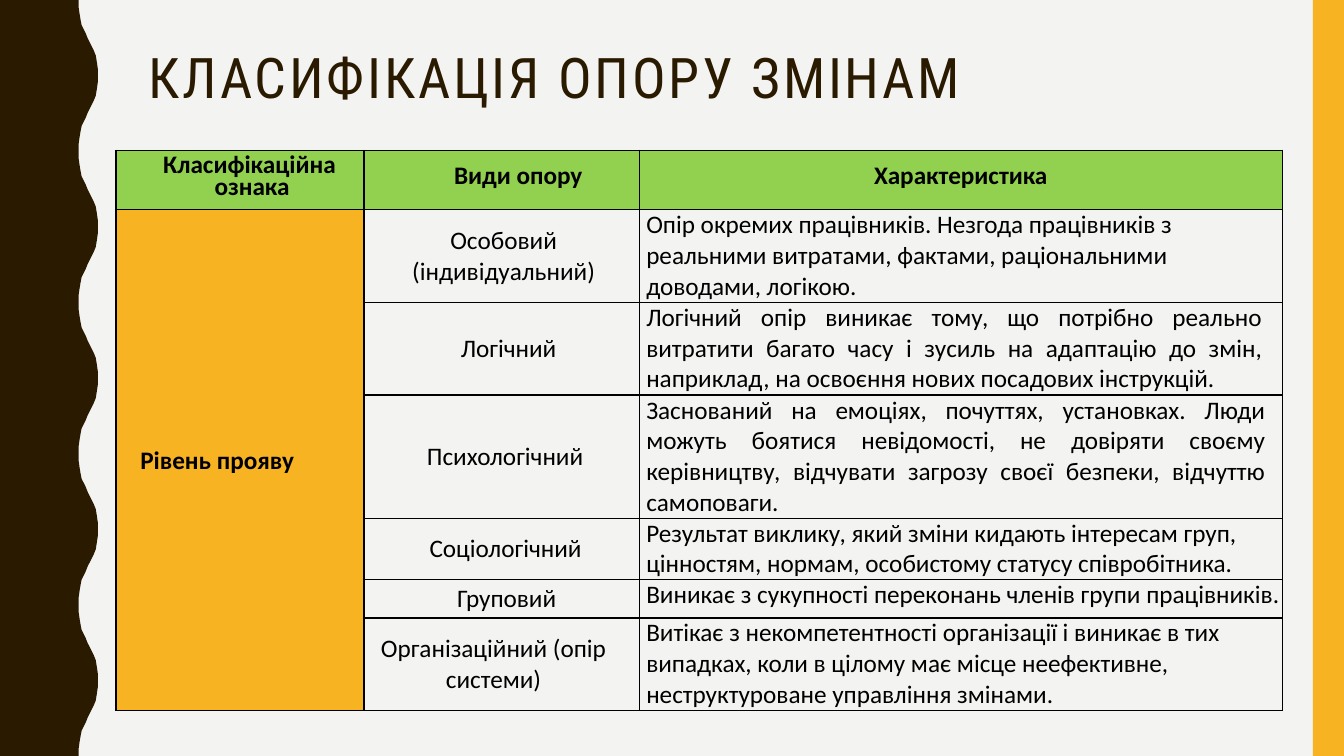
from dataclasses import dataclass

import pptx
import pptx.dml.color
import pptx.enum.shapes
import pptx.enum.text
import pptx.oxml.ns
import pptx.util
from lxml import etree

Inches = pptx.util.Inches
Pt = pptx.util.Pt
ALIGN = pptx.enum.text.PP_ALIGN
MIDDLE = pptx.enum.text.MSO_ANCHOR.MIDDLE
TOP = pptx.enum.text.MSO_ANCHOR.TOP
qn = pptx.oxml.ns.qn


@dataclass
class Theme:
    background: str = "F3F3F2"
    dark: str = "2A1A00"
    amber: str = "F8B323"
    green: str = "92D050"
    ink: str = "000000"
    title_font: str = "Roboto Condensed"
    body_font: str = "Calibri"
    title_size: int = 40
    body_size: int = 18


WAVE_HALF = [(0.78, 0), (0.78, 0.07), (0.79, 0.14), (0.8, 0.2), (0.81, 0.25),
             (0.83, 0.29), (0.85, 0.33), (0.87, 0.38), (0.89, 0.42), (0.91, 0.46),
             (0.93, 0.5), (0.95, 0.55), (0.96, 0.61), (0.97, 0.68), (0.97, 0.75)]
WAVE_PERIOD = 1.5
WAVE_COUNT = 5

HEADERS = [
    ("Класифікаційна ознака", dict(left=0.24, indent=-0.05)),
    ("Види опору", dict(left=0.33)),
    ("Характеристика", dict(left=1.17, right=1.17)),
]
LEVEL = "Рівень прояву"
KINDS = [
    ("Особовий (індивідуальний)", dict(left=0.14, right=0.1),
     "Опір окремих працівників. Незгода працівників з реальними витратами, фактами, "
     "раціональними доводами, логікою.", dict(right=0.2)),
    ("Логічний", dict(left=0.14),
     "Логічний опір виникає тому, що потрібно реально витратити багато часу і зусиль "
     "на адаптацію до змін, наприклад, на освоєння нових посадових інструкцій.",
     dict(align=ALIGN.JUSTIFY, right=0.2)),
    ("Психологічний", dict(left=0.07),
     "Заснований на емоціях, почуттях, установках. Люди можуть боятися невідомості, "
     "не довіряти своєму керівництву, відчувати загрозу своєї безпеки, відчуттю самоповаги.",
     dict(align=ALIGN.JUSTIFY, right=0.17)),
    ("Соціологічний", dict(left=0.08),
     "Результат виклику, який зміни кидають інтересам груп, цінностям, нормам, "
     "особистому статусу співробітника.", {}),
    ("Груповий", dict(left=0.1),
     "Виникає з сукупності переконань членів групи працівників.", {}),
    ("Організаційний (опір системи)", dict(left=0.1, right=0.26),
     "Витікає з некомпетентності організації і виникає в тих випадках, коли в цілому "
     "має місце неефективне, неструктуроване управління змінами.", {}),
]
COLUMN_WIDTHS = [2.46, 2.73, 6.38]
ROW_HEIGHTS = [0.59, 0.92, 0.92, 1.22, 0.61, 0.38, 0.92]


def rgb(colour):
    return pptx.dml.color.RGBColor.from_string(colour)


def write_text(frame, text, *, font, size, colour, bold=False, align=ALIGN.LEFT,
               left=0, right=0, indent=0, line_spacing=1.0, tracking=0):
    paragraph = frame.paragraphs[0]
    paragraph.alignment = align
    paragraph.line_spacing = line_spacing
    paragraph.space_before = paragraph.space_after = Pt(0)
    properties = paragraph._p.get_or_add_pPr()
    for name, length in (("marL", left), ("marR", right), ("indent", indent)):
        properties.set(name, str(int(Inches(length))))
    run = paragraph.add_run()
    run.text = text
    run.font.name = font
    run.font.size = Pt(size)
    run.font.bold = bold
    run.font.color.rgb = rgb(colour)
    if tracking:
        run._r.get_or_add_rPr().set("spc", str(tracking * 100))


class SlideBuilder:
    def __init__(self, slide, theme):
        self.slide = slide
        self.theme = theme
        slide.background.fill.solid()
        slide.background.fill.fore_color.rgb = rgb(theme.background)

    def paint(self, shape, colour):
        shape.shadow.inherit = False
        shape.fill.solid()
        shape.fill.fore_color.rgb = rgb(colour)
        shape.line.fill.background()

    def wave(self):
        cycle = WAVE_HALF + [(x, WAVE_PERIOD - y) for x, y in WAVE_HALF[-2::-1]]
        edge = [(Inches(x), Inches(y + number * WAVE_PERIOD))
                for number in range(WAVE_COUNT) for x, y in cycle]
        outline = self.slide.shapes.build_freeform(0, 0)
        outline.add_line_segments(edge + [(0, Inches(7.5))], close=True)
        self.paint(outline.convert_to_shape(), self.theme.dark)

    def band(self, left, top, width, height):
        strip = self.slide.shapes.add_shape(
            pptx.enum.shapes.MSO_SHAPE.RECTANGLE,
            Inches(left), Inches(top), Inches(width), Inches(height))
        self.paint(strip, self.theme.amber)

    def title(self, text, left, top, width, height):
        heading = self.slide.shapes.title
        heading.left, heading.top = Inches(left), Inches(top)
        heading.width, heading.height = Inches(width), Inches(height)
        frame = heading.text_frame
        frame.word_wrap = True
        frame.auto_size = pptx.enum.text.MSO_AUTO_SIZE.NONE
        frame.vertical_anchor = MIDDLE
        write_text(frame, text, font=self.theme.title_font, size=self.theme.title_size,
                   colour=self.theme.dark, line_spacing=0.9, tracking=2)

    def borders(self, cell):
        properties = cell._tc.get_or_add_tcPr()
        for side in ("a:lnL", "a:lnR", "a:lnT", "a:lnB"):
            line = etree.SubElement(properties, qn(side), w=str(int(Pt(1))))
            fill = etree.SubElement(line, qn("a:solidFill"))
            etree.SubElement(fill, qn("a:srgbClr"), val=self.theme.ink)

    def cell(self, cell, text, anchor=MIDDLE, **text_format):
        cell.vertical_anchor = anchor
        write_text(cell.text_frame, text, font=self.theme.body_font,
                   size=self.theme.body_size, colour=self.theme.ink, **text_format)

    def fill_cell(self, cell, colour):
        cell.fill.solid()
        cell.fill.fore_color.rgb = rgb(colour)

    def table(self, left, top):
        table = self.slide.shapes.add_table(
            len(ROW_HEIGHTS), len(COLUMN_WIDTHS), Inches(left), Inches(top),
            Inches(sum(COLUMN_WIDTHS)), Inches(sum(ROW_HEIGHTS))).table
        table.first_row = table.horz_banding = False
        for column, width in zip(table.columns, COLUMN_WIDTHS):
            column.width = Inches(width)
        for row, height in zip(table.rows, ROW_HEIGHTS):
            row.height = Inches(height)
        for cell in table.iter_cells():
            cell.margin_left = cell.margin_right = 0
            cell.margin_top = cell.margin_bottom = 0
            self.borders(cell)
            cell.fill.background()

        for column, (header, layout) in enumerate(HEADERS):
            self.cell(table.cell(0, column), header, bold=True, align=ALIGN.CENTER,
                      line_spacing=Pt(16), **layout)
            self.fill_cell(table.cell(0, column), self.theme.green)

        level = table.cell(1, 0)
        level.merge(table.cell(len(KINDS), 0))
        self.cell(level, LEVEL, bold=True, align=ALIGN.CENTER, left=0.07, right=0.52,
                  line_spacing=1.07)
        self.fill_cell(level, self.theme.amber)

        for row, (kind, kind_layout, feature, feature_layout) in enumerate(KINDS, 1):
            self.cell(table.cell(row, 1), kind, align=ALIGN.CENTER, **kind_layout)
            self.cell(table.cell(row, 2), feature, anchor=TOP, left=0.07, **feature_layout)


def main():
    deck = pptx.Presentation()
    deck.slide_width, deck.slide_height = Inches(13.33), Inches(7.5)
    builder = SlideBuilder(deck.slides.add_slide(deck.slide_layouts[5]), Theme())
    builder.wave()
    builder.band(13.02, 0, 0.31, 7.5)
    builder.table(1.15, 1.49)
    builder.title("КЛАСИФІКАЦІЯ ОПОРУ ЗМІНАМ", 1.37, 0.42, 11.13, 0.76)
    deck.save("out.pptx")


if __name__ == "__main__":
    main()
